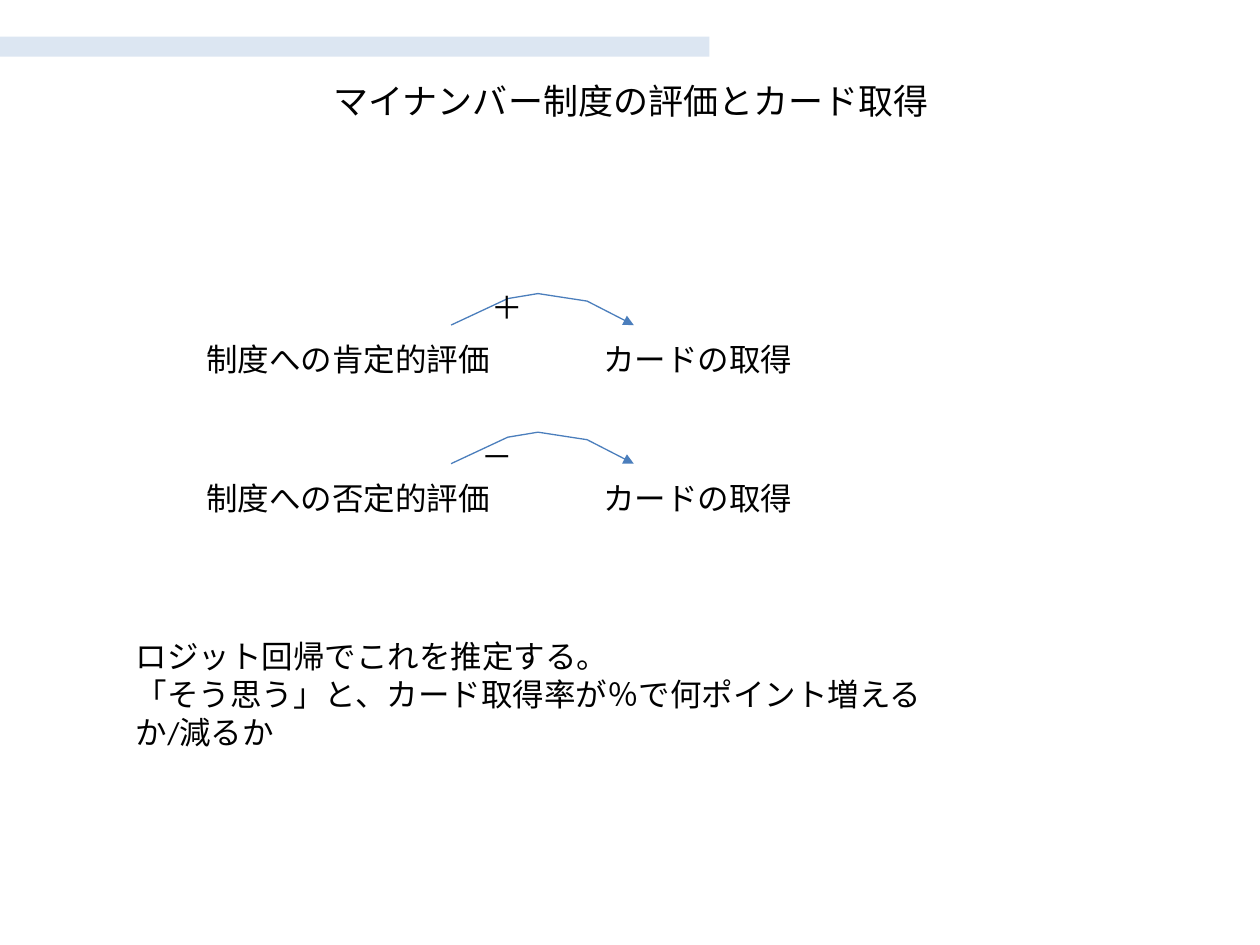
from lxml.etree import SubElement
from pptx import Presentation
from pptx.dml.color import RGBColor
from pptx.enum.shapes import MSO_SHAPE
from pptx.enum.text import MSO_ANCHOR, PP_ALIGN
from pptx.oxml.ns import qn
from pptx.util import Inches, Pt

COLORS = {"bar": "DCE6F2", "text": "000000", "arrow": "4B7EBC"}
BODY = {"name": "Calibri", "size": Pt(18)}
TITLE = {"name": "Calibri", "size": Pt(20)}

# Arrow outline, measured from its start
ARC = [(0, 0), (0.45, -0.21), (0.69, -0.25), (1.08, -0.19), (1.45, 0)]

# Top of the row, cause, sign, centre of the sign (x, y)
ROWS = [
    (2.65, "制度への肯定的評価", "＋", (4.03, 2.44)),
    (3.75, "制度への否定的評価", "－", (3.95, 3.62)),
]


def color(key):
    return RGBColor.from_string(COLORS[key])


def add_text(s, box, lines, font=BODY, align=PP_ALIGN.LEFT, anchor=MSO_ANCHOR.TOP):
    tf = s.shapes.add_textbox(*map(Inches, box)).text_frame
    tf.word_wrap = True
    tf.vertical_anchor = anchor
    for i, line in enumerate(lines):
        p = tf.add_paragraph() if i else tf.paragraphs[0]
        p.alignment = align
        r = p.add_run()
        r.text = line
        for name, value in font.items():
            setattr(r.font, name, value)
        r.font.color.rgb = color("text")


def add_bar(s, box):
    sp = s.shapes.add_shape(MSO_SHAPE.RECTANGLE, *map(Inches, box))
    sp.shadow.inherit = False
    sp.fill.solid()
    sp.fill.fore_color.rgb = color("bar")
    sp.line.fill.background()


def add_arc_arrow(s, x, y):
    points = [(Inches(x + dx), Inches(y + dy)) for dx, dy in ARC]
    builder = s.shapes.build_freeform(*points[0])
    builder.add_line_segments(points[1:], close=False)
    sp = builder.convert_to_shape()
    sp.shadow.inherit = False
    sp.fill.background()
    sp.line.color.rgb = color("arrow")
    sp.line.width = Pt(0.75)
    # Arrowhead at the end of the line
    ln = sp.line.fill._xPr
    SubElement(ln, qn("a:tailEnd"), type="triangle")


def add_relation(s, top, cause, sign, center):
    add_text(s, (1.54, top, 2.52, 0.4), [cause])
    add_text(s, (4.69, top, 2.28, 0.4), ["カードの取得"])
    add_arc_arrow(s, 3.58, top - 0.07)
    x, y = center
    add_text(s, (x - 0.3, y - 0.2, 0.6, 0.4), [sign], align=PP_ALIGN.CENTER)


def main():
    prs = Presentation()
    prs.slide_width, prs.slide_height = Inches(10), Inches(7.5)
    s = prs.slides.add_slide(prs.slide_layouts[6])

    # Header
    add_bar(s, (0, 0.29, 5.63, 0.16))
    add_text(s, (0.51, 0.44, 9, 0.71), ["マイナンバー制度の評価とカード取得"],
             TITLE, PP_ALIGN.CENTER, MSO_ANCHOR.MIDDLE)

    # Expected relations
    for row in ROWS:
        add_relation(s, *row)

    # Method
    add_text(s, (0.98, 5.01, 6.63, 0.71), [
        "ロジット回帰でこれを推定する。",
        "「そう思う」と、カード取得率が％で何ポイント増えるか/減るか",
    ])
    prs.save("out.pptx")


if __name__ == "__main__":
    main()
